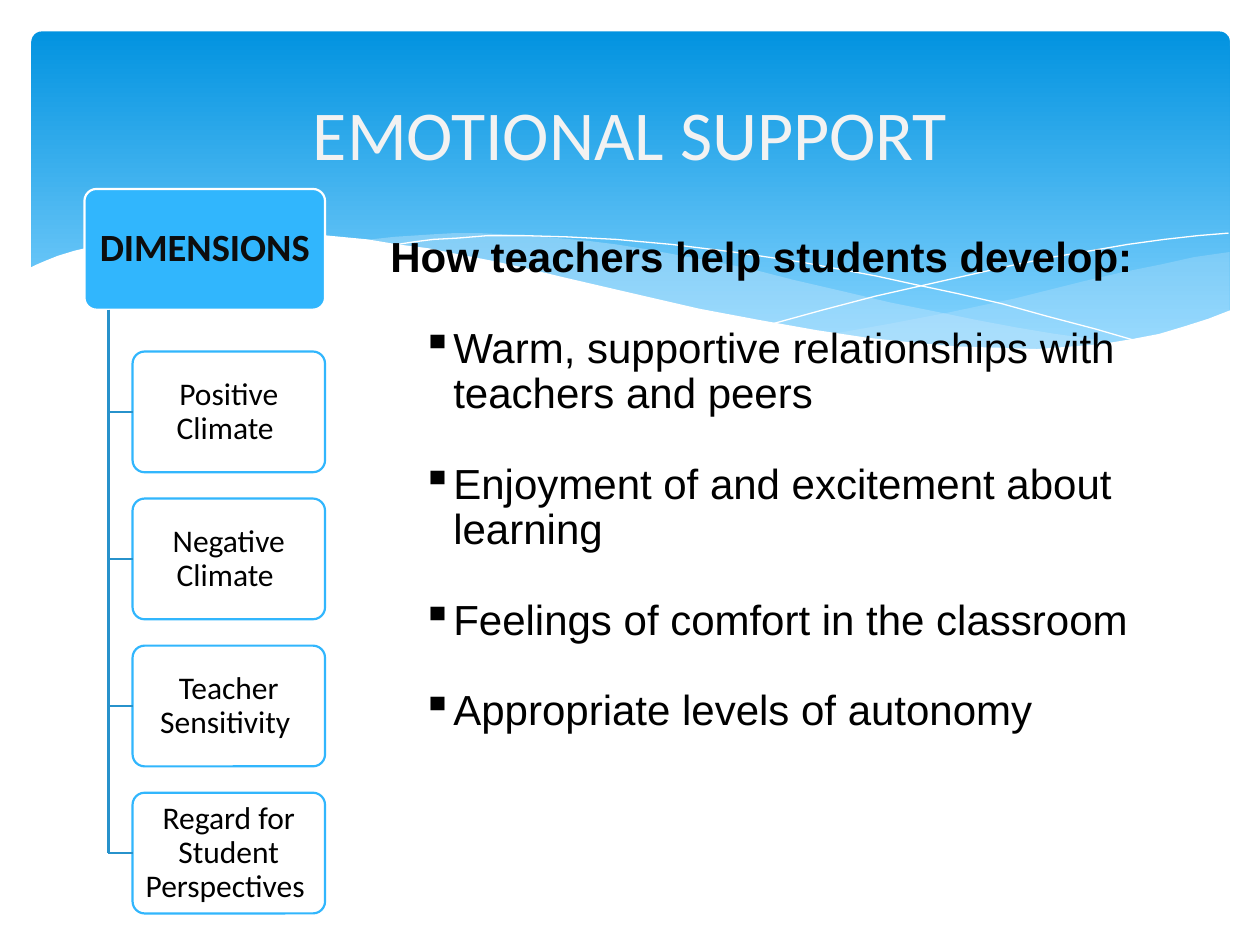
from lxml import etree
from pptx import Presentation
from pptx.dml.color import RGBColor
from pptx.enum.shapes import MSO_CONNECTOR, MSO_SHAPE
from pptx.enum.text import MSO_ANCHOR, PP_ALIGN
from pptx.oxml.ns import qn
from pptx.util import Inches, Pt

ROUNDED = MSO_SHAPE.ROUNDED_RECTANGLE
STRAIGHT = MSO_CONNECTOR.STRAIGHT
MIDDLE = MSO_ANCHOR.MIDDLE
CENTER = PP_ALIGN.CENTER
LEFT_SIDE = 1

RIGHT_WAVE = [
    (9.76, 2), (9.48, 2.04), (9.21, 2.1), (8.91, 2.16), (8.61, 2.23), (8.05, 2.37),
    (7.53, 2.48), (7.06, 2.57), (6.61, 2.65), (6.91, 2.69), (7.19, 2.72), (7.45, 2.75),
    (7.69, 2.77), (8.03, 2.78), (8.35, 2.77), (8.63, 2.75), (8.89, 2.72), (9.13, 2.67),
    (9.35, 2.62), (9.49, 2.57), (9.63, 2.52), (9.76, 2.47)]
MIDDLE_WAVE = [
    (8.93, 2.73), (8.66, 2.69), (8.37, 2.65), (8.07, 2.6), (7.75, 2.54), (7.41, 2.47),
    (7.06, 2.4), (6.68, 2.31), (6.29, 2.22), (5.98, 2.14), (5.69, 2.08), (5.41, 2.03),
    (5.14, 1.98), (4.89, 1.94), (4.65, 1.91), (4.42, 1.89), (4.2, 1.87), (3.99, 1.86),
    (3.8, 1.85), (3.61, 1.85), (3.44, 1.86), (3.13, 1.88), (2.86, 1.91), (3.23, 1.96),
    (3.62, 2.03), (4.04, 2.11), (4.49, 2.22), (4.91, 2.32), (5.3, 2.4), (5.66, 2.48),
    (6.01, 2.55), (6.34, 2.61), (6.65, 2.66), (6.95, 2.7), (7.22, 2.74), (7.48, 2.76),
    (7.73, 2.77), (7.96, 2.78), (8.28, 2.78), (8.57, 2.77), (8.76, 2.75)]
FALLING_LINE = [
    (3.09, 1.95), (3.28, 1.92), (3.44, 1.9), (3.63, 1.89), (3.87, 1.87), (4.16, 1.87),
    (4.5, 1.88), (4.89, 1.9), (5.33, 1.94), (5.82, 2), (6.36, 2.08), (6.95, 2.19),
    (7.27, 2.26), (7.6, 2.33), (7.95, 2.41), (8.31, 2.51), (8.69, 2.61), (9.07, 2.72)]
RISING_LINE = [
    (6.13, 2.57), (6.53, 2.46), (6.95, 2.35), (7.48, 2.23), (8.06, 2.1), (8.36, 2.04),
    (8.66, 1.99), (8.95, 1.94), (9.24, 1.9), (9.51, 1.87), (9.75, 1.85)]
WHITE_WAVE = [
    (9.77, 2.46), (9.59, 2.53), (9.4, 2.59), (9.2, 2.65), (8.99, 2.69), (8.75, 2.73),
    (8.5, 2.75), (8.23, 2.77), (7.93, 2.76), (7.61, 2.75), (7.26, 2.72), (6.88, 2.68),
    (6.48, 2.62), (6.03, 2.54), (5.55, 2.45), (5.03, 2.33), (4.47, 2.2), (4.18, 2.13),
    (3.91, 2.07), (3.65, 2.02), (3.4, 1.97), (3.16, 1.94), (2.92, 1.9), (2.71, 1.88),
    (2.5, 1.86), (2.3, 1.85), (2.11, 1.84), (1.77, 1.84), (1.46, 1.85), (1.19, 1.87),
    (0.95, 1.91), (0.76, 1.95), (0.59, 1.99), (0.46, 2.03), (0.36, 2.07), (0.29, 2.1),
    (0.23, 2.13), (0.23, 3.29), (9.77, 3.29)]

DIMENSIONS = ["Positive Climate ", "Negative Climate ", "Teacher Sensitivity ",
              "Regard for Student Perspectives "]
OUTCOMES = ["Warm, supportive relationships with teachers and peers",
            "Enjoyment of and excitement about learning",
            "Feelings of comfort in the classroom",
            "Appropriate levels of autonomy"]


def rgb(value):
    return RGBColor.from_string(value)


def paint(shape, fill=None, alpha=100, line=None, weight=0):
    shape.shadow.inherit = False
    if fill:
        shape.fill.solid()
        shape.fill.fore_color.rgb = rgb(fill)
        if alpha < 100:
            color = shape.fill._xPr.find(".//" + qn("a:srgbClr"))
            etree.SubElement(color, qn("a:alpha"), val=str(alpha * 1000))
    else:
        shape.fill.background()
    if line:
        shape.line.color.rgb = rgb(line)
        shape.line.width = Pt(weight)
    else:
        shape.line.fill.background()


def style(paragraph, size, font, color, bold=False):
    paragraph.font.size = Pt(size)
    paragraph.font.name = font
    paragraph.font.color.rgb = rgb(color)
    paragraph.font.bold = bold


def add_wave(slide, left, top, points, closed=True, **colors):
    corners = [(Inches(left + x), Inches(top + y)) for x, y in points]
    builder = slide.shapes.build_freeform(*corners[0])
    builder.add_line_segments(corners[1:], close=closed)
    paint(builder.convert_to_shape(), **colors)


def draw_header(slide, left, top, width, height):
    panel = slide.shapes.add_shape(ROUNDED, Inches(left + 0.25), Inches(top + 0.25),
                                   Inches(width - 0.49), Inches(height - 0.6))
    panel.adjustments[0] = 0.03
    paint(panel)
    panel.fill.gradient()
    panel.fill.gradient_angle = 270
    for stop, (position, color) in zip(panel.fill.gradient_stops,
                                       [(0, "0293E0"), (0.9, "83D3FE")]):
        stop.position = position
        stop.color.rgb = rgb(color)
    add_wave(slide, left, top, RIGHT_WAVE, fill="C6E7FC", alpha=29)
    add_wave(slide, left, top, MIDDLE_WAVE, fill="C6E7FC", alpha=40)
    for curve in (FALLING_LINE, RISING_LINE):
        add_wave(slide, left, top, curve, closed=False, line="FFFFFF")
    add_wave(slide, left, top, WHITE_WAVE, fill="FFFFFF")


def write_title(slide, left, top, width, height):
    title = slide.shapes.add_textbox(Inches(left), Inches(top), Inches(width), Inches(height))
    frame = title.text_frame
    frame.word_wrap = True
    frame.vertical_anchor = MIDDLE
    heading = frame.paragraphs[0]
    heading.text = "EMOTIONAL SUPPORT"
    heading.alignment = CENTER
    style(heading, 40, "Calibri", "F2F2F2")


def write_outcomes(slide, left, top, width, height):
    outcomes = slide.shapes.add_textbox(Inches(left), Inches(top), Inches(width), Inches(height))
    frame = outcomes.text_frame
    frame.word_wrap = True
    row = Pt(25.9)
    lead = frame.paragraphs[0]
    lead.text = "How teachers help students develop:"
    lead.line_spacing = row
    style(lead, 24, "Arial", "000000", bold=True)
    for outcome in OUTCOMES:
        item = frame.add_paragraph()
        item.text = outcome
        item.level = 1
        item.line_spacing = row
        item.space_before = row
        style(item, 24, "Arial", "000000")
        properties = item._p.get_or_add_pPr()
        properties.set("marL", str(Inches(0.5)))
        properties.set("indent", str(Inches(-0.25)))
        bullet = etree.Element(qn("a:buChar"), char="▪")
        properties.find(qn("a:defRPr")).addprevious(bullet)


def add_card(slide, left, top, width, height, label, size, color, bold=False, **colors):
    card = slide.shapes.add_shape(ROUNDED, Inches(left), Inches(top),
                                  Inches(width), Inches(height))
    card.adjustments[0] = 0.1
    paint(card, weight=1.25, **colors)
    frame = card.text_frame
    frame.word_wrap = True
    frame.vertical_anchor = MIDDLE
    frame.margin_left = frame.margin_right = Inches(0.07)
    frame.margin_top = frame.margin_bottom = Inches(0.06)
    caption = frame.paragraphs[0]
    caption.text = label
    caption.alignment = CENTER
    caption.line_spacing = 0.9
    style(caption, size, "Calibri", color, bold)
    return card


def add_branch(slide, x1, y1, x2, y2):
    branch = slide.shapes.add_connector(STRAIGHT, Inches(x1), Inches(y1), Inches(x2), Inches(y2))
    branch.line.color.rgb = rgb("2792CB")
    branch.line.width = Pt(1.25)
    etree.SubElement(branch._element.spPr, qn("a:effectLst"))
    return branch


def draw_dimensions(slide, left, top, width, height):
    card_height = height / 6
    pitch = (height - card_height - 1.29) / (len(DIMENSIONS) - 1)
    indent = width / 5
    trunk = left + width / 10
    add_card(slide, left, top, width, card_height, "DIMENSIONS", 22, "0D0D0D", bold=True,
             fill="31B6FD", line="FFFFFF")
    add_branch(slide, trunk, top + card_height, trunk, top + height - card_height / 2)
    for index, dimension in enumerate(DIMENSIONS):
        card_top = top + 1.29 + index * pitch
        card = add_card(slide, left + indent, card_top, width - indent, card_height,
                        dimension, 18, "000000", fill="FFFFFF", alpha=90, line="31B6FD")
        middle = card_top + card_height / 2
        branch = add_branch(slide, trunk, middle, left + indent, middle)
        branch.end_connect(card, LEFT_SIDE)


def main():
    deck = Presentation()
    deck.slide_width, deck.slide_height = Inches(10), Inches(7.5)
    slide = deck.slides.add_slide(deck.slide_layouts[6])
    draw_header(slide, 0, 0, 10, 3.3)
    write_title(slide, 0.5, 0.37, 9, 1.37)
    write_outcomes(slide, 3, 1.82, 7, 4.1)
    draw_dimensions(slide, 0.67, 1.5, 1.91, 5.75)
    deck.save("out.pptx")


if __name__ == "__main__":
    main()
